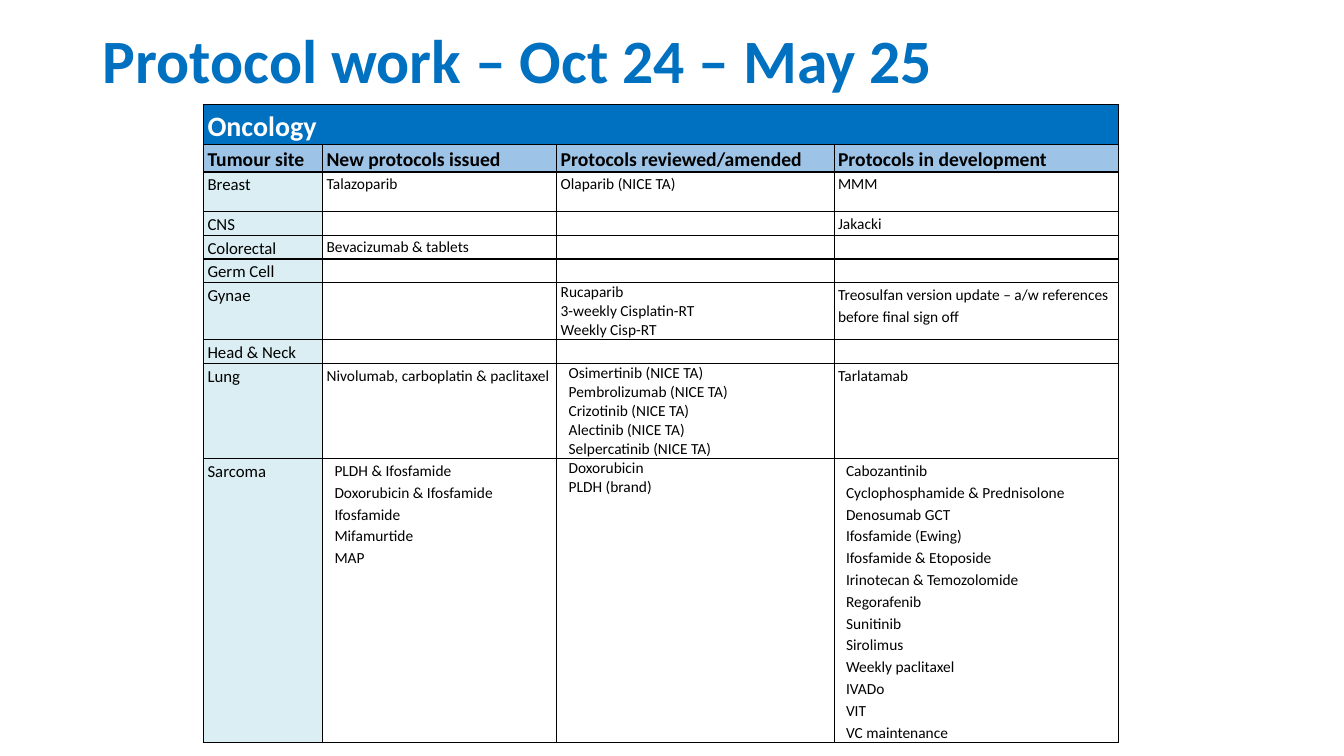
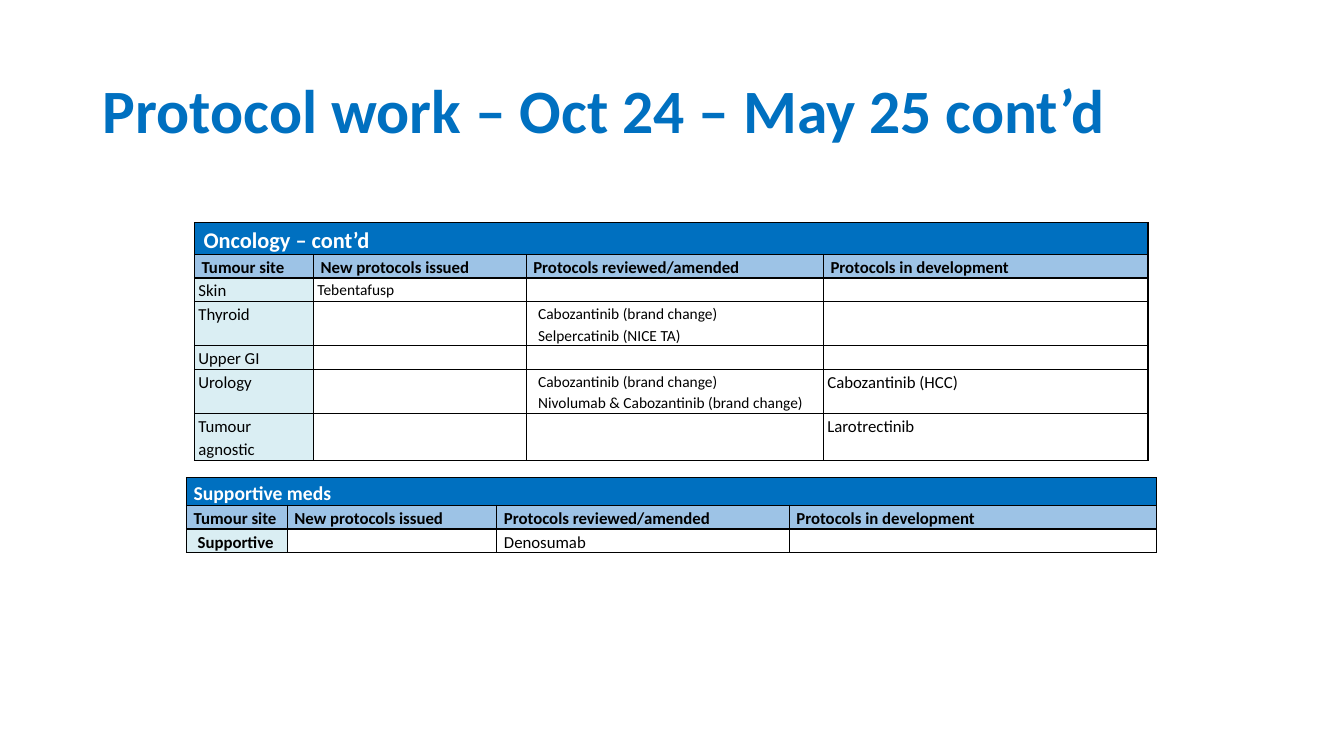
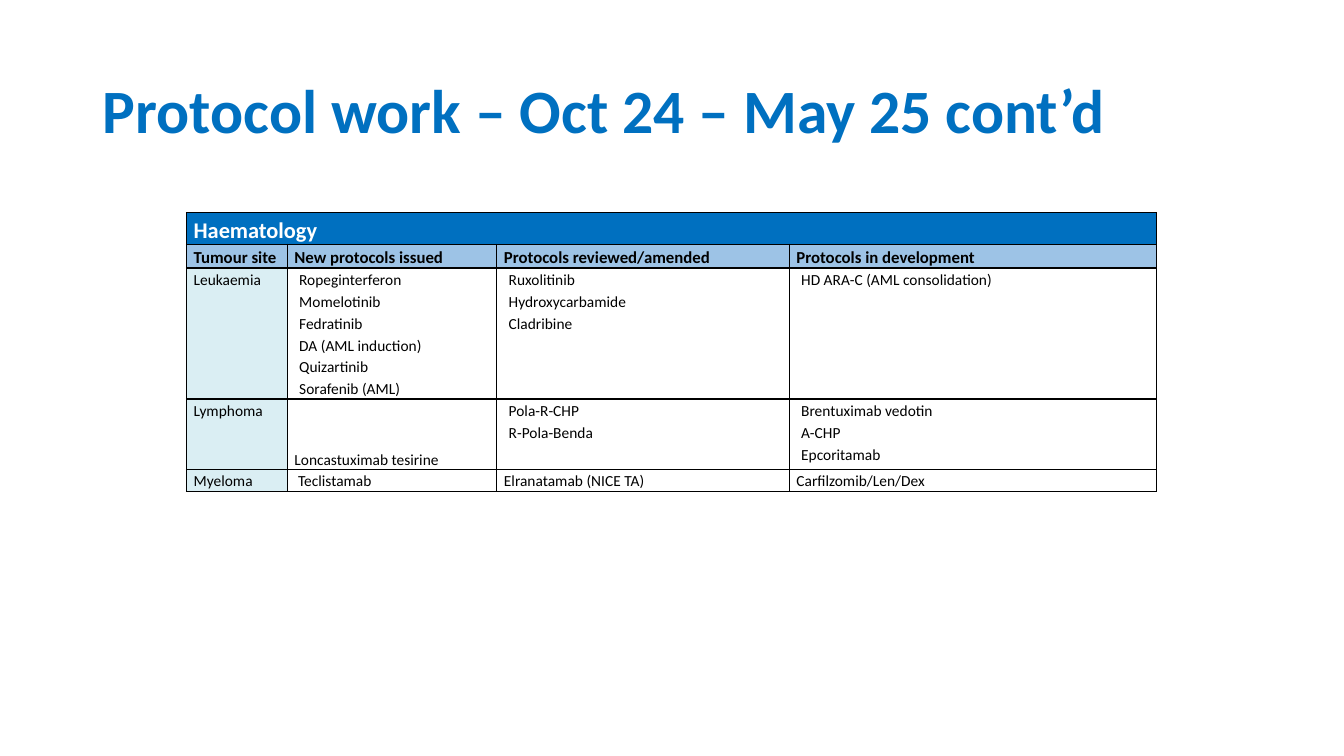
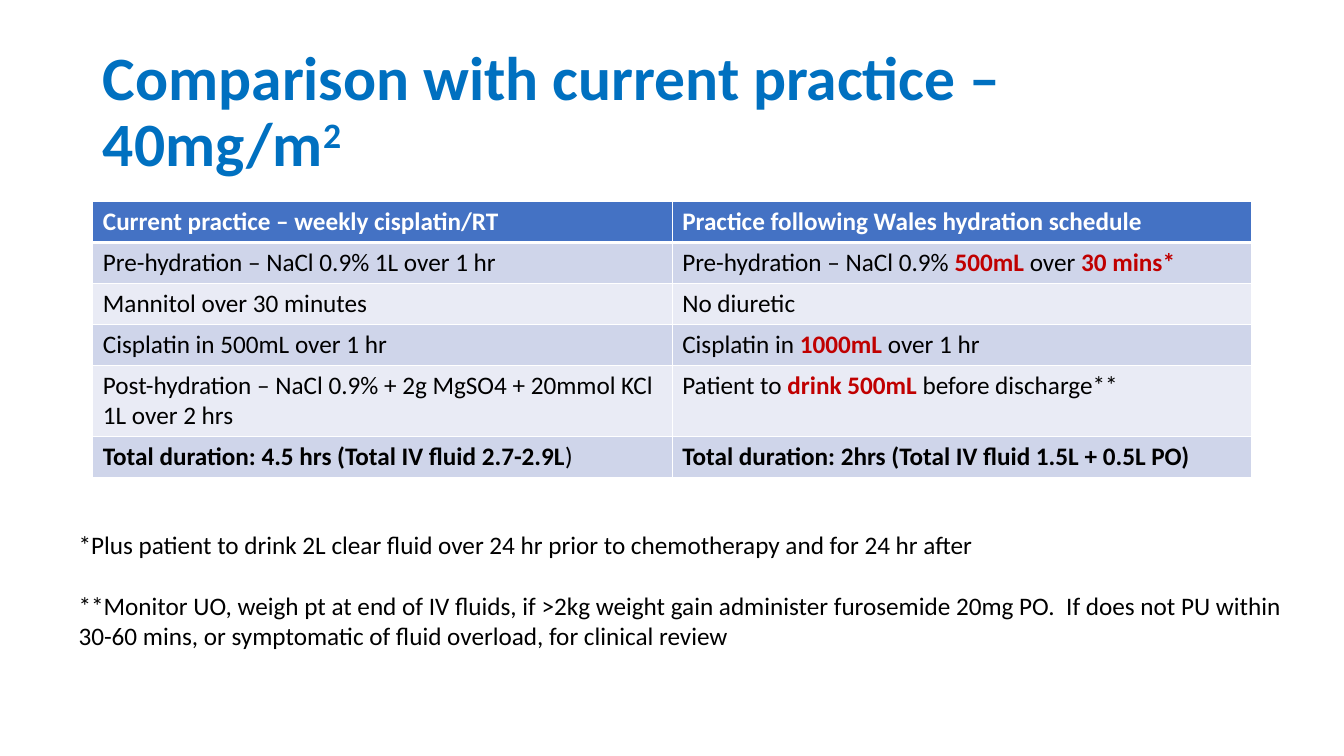
from pptx import Presentation
from pptx import util as u
from pptx.dml import color
from pptx.enum import text
from pptx.oxml import ns
from lxml import etree

COLORS = {"blue": "0070C0", "header": "9DC3E6", "site": "DAEEF3", "white": "FFFFFF",
          "black": "000000", "red": "C00000", "accent": "4472C4", "band": "CFD5EA", "pale": "E9EBF5"}


def write(para, content, size, tint="black", bold=False):
    span = para.add_run()
    span.text = content
    for name, value in {"name": "Calibri", "size": u.Pt(size), "bold": bold}.items():
        setattr(span.font, name, value)
    span.font.color.rgb = color.RGBColor.from_string(COLORS[tint])
    return span


def add_grid(page, left, top, widths, heights, line):
    frame = page.shapes.add_table(len(heights), len(widths), u.Cm(left), u.Cm(top),
                                  u.Cm(sum(widths)), u.Cm(sum(heights)))
    grid = frame.table
    for column, width in zip(grid.columns, widths):
        column.width = u.Cm(width)
    for row, height in zip(grid.rows, heights):
        row.height = u.Cm(height)
    for cell in grid.iter_cells():
        props = cell._tc.get_or_add_tcPr()
        for side in ("lnL", "lnR", "lnT", "lnB"):
            edge = etree.SubElement(props, ns.qn("a:" + side), w=str(u.Pt(1)))
            fill = etree.SubElement(edge, ns.qn("a:solidFill"))
            etree.SubElement(fill, ns.qn("a:srgbClr"), val=COLORS[line])
    return grid


deck = Presentation()
deck.slide_width, deck.slide_height = u.Cm(33.87), u.Cm(19.05)

titles = [
    ("Protocol work – Oct 24 – May 25", -0.25),
    ("Protocol work – Oct 24 – May 25 cont’d", 1.02),
    ("Protocol work – Oct 24 – May 25 cont’d", 1.02),
    ("Comparison with current practice – 40mg/m", 1.02),
]
pages = []
for heading, top in titles:
    page = deck.slides.add_slide(deck.slide_layouts[5])
    box = page.shapes.title
    for name, value in {"left": 2.34, "top": top, "width": 29.21, "height": 3.68}.items():
        setattr(box, name, u.Cm(value))
    frame = box.text_frame
    for name, value in {"word_wrap": True, "auto_size": text.MSO_AUTO_SIZE.NONE,
                        "vertical_anchor": text.MSO_ANCHOR.MIDDLE}.items():
        setattr(frame, name, value)
    para = frame.paragraphs[0]
    para.alignment = text.PP_ALIGN.LEFT
    para.line_spacing = 0.9
    write(para, heading, 44, "blue", True)
    pages.append(page)
power = write(pages[3].shapes.title.text_frame.paragraphs[0], "2", 44, "blue", True)
power.font._element.set("baseline", "30000")

headers = ["Tumour site", "New protocols issued", "Protocols reviewed/amended", "Protocols in development"]
wide = [2.54, 5.28, 7.37, 9.25]
site_tables = [
    {"page": 0, "left": 5.13, "top": 2.64, "widths": [3, 5.9, 6.99, 7.16],
     "heights": [1, 0.69, 1, 0.59, 0.6, 0.59, 1.44, 0.6, 2.4, 7.14],
     "title": "Oncology", "title_size": 20, "header_size": 14, "site_size": 12,
     "header_inset": 0.1, "inset": 0.1,
     "rows": [
         ["Breast", "Talazoparib", "Olaparib (NICE TA)", "MMM"],
         ["CNS", "", "", "Jakacki"],
         ["Colorectal", "Bevacizumab & tablets", "", ""],
         ["Germ Cell", "", "", ""],
         ["Gynae", "", "Rucaparib\n3-weekly Cisplatin-RT\nWeekly Cisp-RT",
          "Treosulfan version update – a/w references before final sign off"],
         ["Head & Neck", "", "", ""],
         ["Lung", "Nivolumab, carboplatin & paclitaxel",
          "Osimertinib (NICE TA)\nPembrolizumab (NICE TA)\nCrizotinib (NICE TA)\n"
          "Alectinib (NICE TA)\nSelpercatinib (NICE TA)", "Tarlatamab"],
         ["Sarcoma", "PLDH & Ifosfamide\nDoxorubicin & Ifosfamide\nIfosfamide\nMifamurtide\nMAP",
          "Doxorubicin\nPLDH (brand)",
          "Cabozantinib\nCyclophosphamide & Prednisolone\nDenosumab GCT\nIfosfamide (Ewing)\n"
          "Ifosfamide & Etoposide\nIrinotecan & Temozolomide\nRegorafenib\nSunitinib\nSirolimus\n"
          "Weekly paclitaxel\nIVADo\nVIT\nVC maintenance"]],
     "special": {(6, 2): {"inset": 0.1, "spacing": 1}, (8, 2): {"spacing": 1}, (9, 2): {"spacing": 1}}},
    {"page": 1, "left": 4.9, "top": 5.61, "widths": [3, 5.36, 7.49, 8.18],
     "heights": [0.8, 0.59, 0.6, 1.11, 0.59, 1.11, 1.18],
     "title": "Oncology – cont’d", "title_size": 16, "header_size": 12, "site_size": 12,
     "header_inset": 0.18, "inset": 0.1,
     "rows": [
         ["Skin", "Tebentafusp", "", ""],
         ["Thyroid", "", "Cabozantinib (brand change)\nSelpercatinib (NICE TA)", ""],
         ["Upper GI", "", "", ""],
         ["Urology", "", "Cabozantinib (brand change)\nNivolumab & Cabozantinib (brand change)",
          "Cabozantinib (HCC)"],
         ["Tumour agnostic", "", "", "Larotrectinib"]],
     "special": {(0, 0): {"inset": 0.23}, (5, 3): {"size": 12}, (6, 3): {"size": 12}}},
    {"page": 1, "left": 4.7, "top": 12.04, "widths": wide, "heights": [0.69, 0.6, 0.59],
     "title": "Supportive meds", "title_size": 14, "header_size": 12, "site_size": 12,
     "header_inset": 0.18, "inset": 0.18,
     "rows": [["Supportive", "", "Denosumab", ""]],
     "special": {(2, 0): {"inset": 0.28, "bold": True}, (2, 2): {"size": 12}}},
    {"page": 2, "left": 4.7, "top": 5.36, "widths": wide, "heights": [0.79, 0.6, 3.3, 1.77, 0.56],
     "title": "Haematology", "title_size": 16, "header_size": 12, "site_size": 11,
     "header_inset": 0.18, "inset": 0.18,
     "rows": [
         ["Leukaemia",
          "Ropeginterferon\nMomelotinib\nFedratinib\nDA (AML induction)\nQuizartinib\nSorafenib (AML)",
          "Ruxolitinib\nHydroxycarbamide\nCladribine", "HD ARA-C (AML consolidation)"],
         ["Lymphoma", "Loncastuximab tesirine", "Pola-R-CHP\nR-Pola-Benda",
          "Brentuximab vedotin\nA-CHP\nEpcoritamab"],
         ["Myeloma", "Teclistamab", "Elranatamab (NICE TA)", "Carfilzomib/Len/Dex"]],
     "special": {(2, 3): {"inset": 0.3}, (4, 1): {"inset": 0.27},
                 (3, 1): {"spacing": 1, "anchor": text.MSO_ANCHOR.BOTTOM}}},
]

for plan in site_tables:
    grid = add_grid(pages[plan["page"]], plan["left"], plan["top"], plan["widths"], plan["heights"], "black")
    grid.cell(0, 0).merge(grid.cell(0, 3))
    for r, row in enumerate([[plan["title"], "", "", ""], headers] + plan["rows"]):
        for c, content in enumerate(row):
            look = {"size": 11, "tint": "black", "bold": r < 2, "fill": "white", "spacing": 1.15,
                    "inset": 0.3 if "\n" in content else plan["inset"], "anchor": text.MSO_ANCHOR.TOP}
            if r == 0:
                look.update(size=plan["title_size"], tint="white", fill="blue")
            elif r == 1:
                look.update(size=plan["header_size"], fill="header", inset=plan["header_inset"])
            elif c == 0:
                look.update(size=plan["site_size"], fill="site")
            look.update(plan["special"].get((r, c), {}))
            cell = grid.cell(r, c)
            cell.fill.solid()
            cell.fill.fore_color.rgb = color.RGBColor.from_string(COLORS[look["fill"]])
            for name, value in {"margin_left": u.Cm(look["inset"]), "margin_right": u.Cm(plan["inset"]),
                                "margin_top": 0, "margin_bottom": 0,
                                "vertical_anchor": look["anchor"]}.items():
                setattr(cell, name, value)
            for i, item in enumerate(content.split("\n")):
                para = cell.text_frame.add_paragraph() if i else cell.text_frame.paragraphs[0]
                para.line_spacing = look["spacing"]
                if item:
                    write(para, item, look["size"], look["tint"], look["bold"])
                else:
                    para._p.get_or_add_endParaRPr().set("sz", "1100")

styles = {"head": ("white", True), "plain": ("black", False), "bold": ("black", True), "red": ("red", True)}
comparison = [
    [[("Current practice – weekly cisplatin/RT", "head")],
     [("Practice following Wales hydration schedule", "head")]],
    [[("Pre-hydration – NaCl 0.9% 1L over 1 hr", "plain")],
     [("Pre-hydration – NaCl 0.9% ", "plain"), ("500mL ", "red"), ("over ", "plain"), ("30 mins*", "red")]],
    [[("Mannitol over 30 minutes", "plain")], [("No diuretic", "plain")]],
    [[("Cisplatin in 500mL over 1 hr", "plain")],
     [("Cisplatin in ", "plain"), ("1000mL ", "red"), ("over 1 hr", "plain")]],
    [[("Post-hydration – NaCl 0.9% + 2g MgSO4 + 20mmol KCl 1L over 2 hrs", "plain")],
     [("Patient to ", "plain"), ("drink 500mL ", "red"), ("before discharge**", "plain")]],
    [[("Total duration: 4.5 hrs (Total IV fluid 2.7-2.9L", "bold"), (")", "plain")],
     [("Total duration: 2hrs (Total IV fluid 1.5L + 0.5L PO)", "bold")]],
]
page = pages[3]
grid = add_grid(page, 2.34, 5.08, [14.6, 14.6], [1.03, 1.03, 1.03, 1.03, 1.79, 1.03], "white")
for r, row in enumerate(comparison):
    for c, spans in enumerate(row):
        cell = grid.cell(r, c)
        fill = "accent" if r == 0 else "band" if r % 2 else "pale"
        cell.fill.solid()
        cell.fill.fore_color.rgb = color.RGBColor.from_string(COLORS[fill])
        for content, style in spans:
            write(cell.text_frame.paragraphs[0], content, 18, *styles[style])
for c in range(2):
    for r, side in ((0, "lnB"), (1, "lnT")):
        grid.cell(r, c)._tc.tcPr.find(ns.qn("a:" + side)).set("w", str(u.Pt(3)))

box = page.shapes.add_textbox(u.Cm(1.73), u.Cm(13.21), u.Cm(30.86), u.Cm(4.88))
frame = box.text_frame
frame.word_wrap = True
write(frame.paragraphs[0],
      "*Plus patient to drink 2L clear fluid over 24 hr prior to chemotherapy and for 24 hr after", 18)
para = frame.add_paragraph()
para.space_before = u.Pt(22)
write(para, "**Monitor UO, weigh pt at end of IV fluids, if >2kg weight gain administer furosemide 20mg PO.  "
            "If does not PU within 30-60 mins, or symptomatic of fluid overload, for clinical review", 18)

deck.save("out.pptx")
